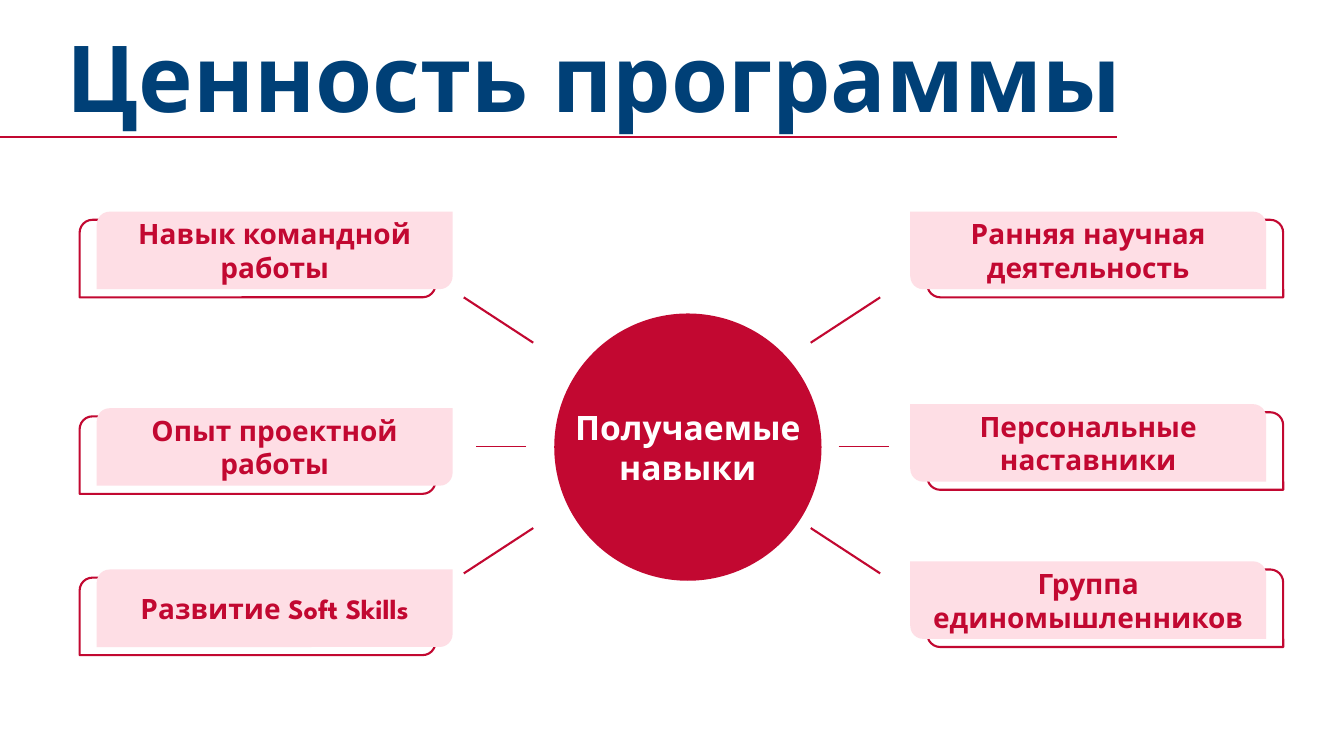
from lxml.etree import SubElement
from pptx import Presentation
from pptx.dml.color import RGBColor
from pptx.enum.shapes import MSO_CONNECTOR as Conn, MSO_SHAPE as Shape
from pptx.enum.text import MSO_ANCHOR as Anchor, MSO_AUTO_SIZE as AutoSize, PP_ALIGN as Align
from pptx.oxml.ns import qn
from pptx.util import Pt

RED, PINK, NAVY, WHITE = "C20831", "FEDEE5", "004077", "FFFFFF"


def rgb(color):
    return RGBColor.from_string(color)


class SlideBuilder:
    font = "League Spartan"

    def __init__(self, slide):
        self.s = slide

    def label(self, sp, text, size, color, align=Align.CENTER, anchor=Anchor.MIDDLE):
        tf = sp.text_frame
        tf.text = text
        tf.auto_size = AutoSize.NONE
        tf.vertical_anchor = anchor
        for p in tf.paragraphs:
            p.alignment = align
            for r in p.runs:
                r.font.name, r.font.size, r.font.bold = self.font, Pt(size), True
                r.font.color.rgb = rgb(color)
        return tf

    def title(self, text, x, y, w, h):
        sp = self.s.shapes.title
        sp.left, sp.top, sp.width, sp.height = Pt(x), Pt(y), Pt(w), Pt(h)
        self.label(sp, text, 66, NAVY, Align.LEFT, Anchor.TOP).word_wrap = True

    def shape(self, kind, x, y, w, h, fill=None, line=None, weight=1.5):
        sp = self.s.shapes.add_shape(kind, Pt(x), Pt(y), Pt(w), Pt(h))
        sp.shadow.inherit = False
        if fill:
            sp.fill.solid()
            sp.fill.fore_color.rgb = rgb(fill)
        else:
            sp.fill.background()
        if line:
            sp.line.color.rgb = rgb(line)
            sp.line.width = Pt(weight)
        else:
            sp.line.fill.background()
        return sp

    def line(self, x1, y1, x2, y2, weight=1.5):
        cn = self.s.shapes.add_connector(Conn.STRAIGHT, Pt(x1), Pt(y1), Pt(x2), Pt(y2))
        cn.line.color.rgb = rgb(RED)
        cn.line.width = Pt(weight)
        SubElement(cn._element.spPr, qn("a:effectLst"))

    def card(self, text, x, y, side):
        """Pink card over an outline shifted outwards; side is -1 left, 1 right."""
        w, h, corner = 254.2, 55.4, 0.167
        corners = (corner, 0) if side < 0 else (0, corner)
        outline = self.shape(Shape.ROUND_2_DIAG_RECTANGLE, x + 12.2 * side, y + 5.8, w, h, line=RED)
        panel = self.shape(Shape.ROUND_2_DIAG_RECTANGLE, x, y, w, h, fill=PINK)
        for sp in (outline, panel):
            sp.adjustments[0], sp.adjustments[1] = corners
        tf = self.label(panel, text, 20, RED)
        tf.word_wrap = True
        tf.margin_top = tf.margin_bottom = 0

    def hub(self, text, x, y, d):
        sp = self.shape(Shape.OVAL, x, y, d, d, fill=RED, line=RED, weight=3)
        self.label(sp, text, 24, WHITE).word_wrap = False


def main():
    prs = Presentation()
    prs.slide_width, prs.slide_height = Pt(960), Pt(540)
    b = SlideBuilder(prs.slides.add_slide(prs.slide_layouts[5]))

    # Heading
    b.title("Ценность программы", 40.3, 10.8, 919.4, 87.1)
    b.line(0, 98, 797.8, 98, 1.75)

    # Skill cards: left and right columns
    columns = [
        (69.1, -1, [(151.2, "Навык командной работы"),
                    (291.6, "Опыт проектной\nработы"),
                    (406.8, "Развитие Soft Skills")]),
        (650.2, 1, [(151.2, "Ранняя научная\nдеятельность"),
                    (288.7, "Персональные\nнаставники"),
                    (401, "Группа\nединомышленников")]),
    ]
    for x, side, cards in columns:
        for y, text in cards:
            b.card(text, x, y, side)

    # Central circle
    b.hub("Получаемые\nнавыки", 397.4, 225.4, 187.9)

    # Rays between the circle and the cards
    for side in (-1, 1):
        for up in (-1, 1):
            b.line(480 + 148.7 * side, 311 + 98.6 * up, 480 + 99.1 * side, 311 + 66.2 * up)
        b.line(487.4 + 111.6 * side, 319, 487.4 + 147.6 * side, 319, 0.5)

    prs.save("out.pptx")


if __name__ == "__main__":
    main()
